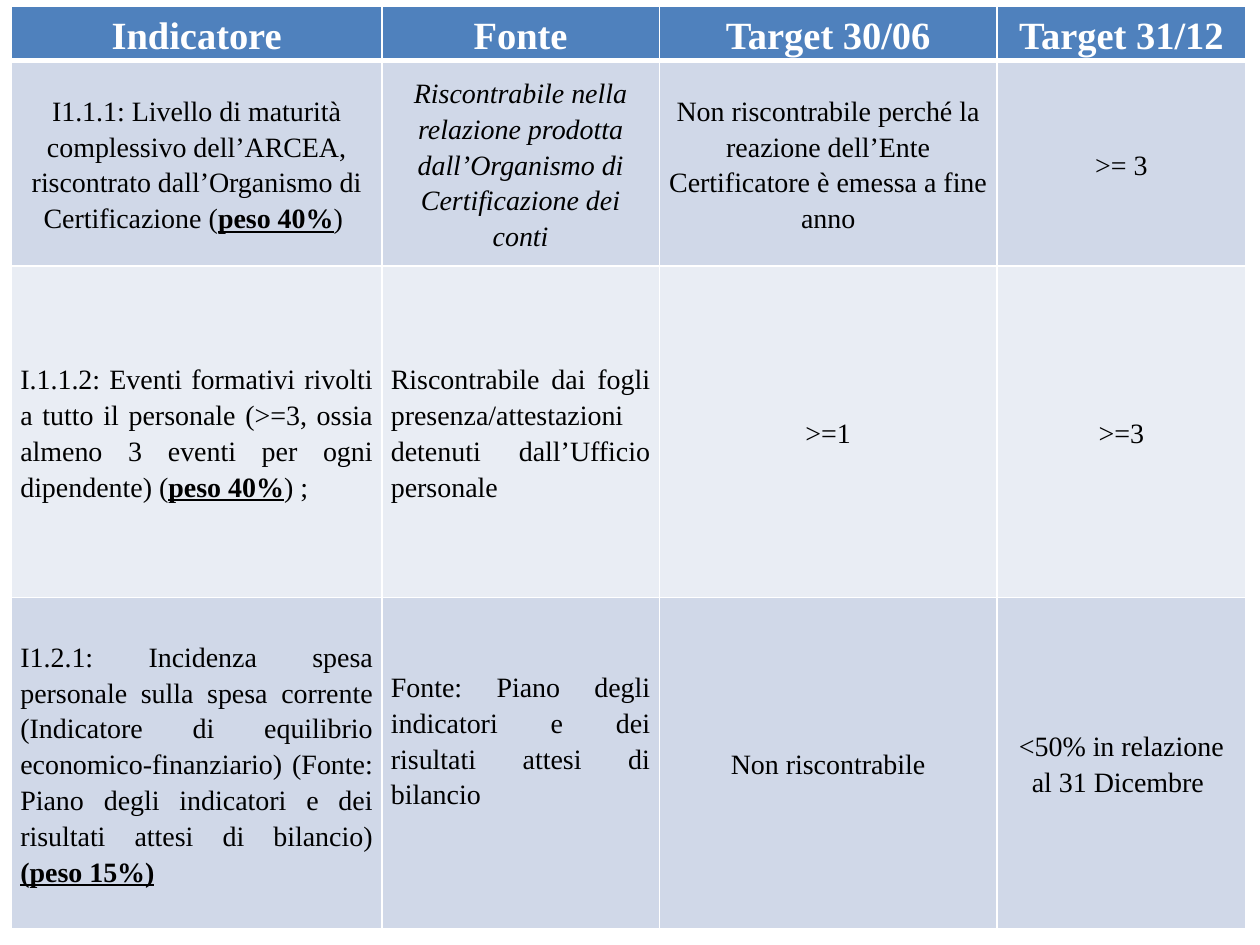
from lxml import etree
from pptx import Presentation
from pptx.dml.color import RGBColor
from pptx.enum.text import MSO_ANCHOR, PP_ALIGN
from pptx.oxml.ns import qn
from pptx.util import Cm, Pt

CENTER, JUSTIFY = PP_ALIGN.CENTER, PP_ALIGN.JUSTIFY
MIDDLE = MSO_ANCHOR.MIDDLE
FONT = "Times New Roman"
WHITE, BLACK, BLUE = "FFFFFF", "000000", "4F81BD"
BANDS = ["D0D8E8", "E9EDF4"]
COLUMN_WIDTHS = [7.47, 5.59, 6.81, 5.01]
ROW_HEIGHTS = [1.09, 4.14, 6.68, 6.68]
HEADINGS = ["Indicatore", "Fonte", "Target 30/06", "Target 31/12"]
INDICATORS = [
    [
        ("I1.1.1: Livello di maturità complessivo dell’ARCEA, riscontrato "
         "dall’Organismo di Certificazione (", "peso 40%", ") "),
        ("Riscontrabile nella relazione prodotta dall’Organismo di "
         "Certificazione dei conti",),
        ("Non riscontrabile perché la reazione dell’Ente Certificatore è "
         "emessa a fine anno",),
        (">= 3",),
    ],
    [
        ("I.1.1.2: Eventi formativi rivolti a tutto il personale (>=3, ossia "
         "almeno 3 eventi per ogni dipendente) (", "peso 40%", ") ;"),
        ("Riscontrabile dai fogli presenza/attestazioni detenuti "
         "dall’Ufficio personale",),
        (">=1",),
        (">=3",),
    ],
    [
        ("I1.2.1: Incidenza spesa personale sulla spesa corrente (Indicatore "
         "di equilibrio economico-finanziario) (Fonte: Piano degli indicatori "
         "e dei risultati attesi di bilancio) ", "(peso 15%)"),
        ("Fonte: Piano degli indicatori e dei risultati attesi di bilancio",),
        ("Non riscontrabile",),
        ("<50% in relazione al 31 Dicembre ",),
    ],
]


def rgb(color):
    """Turn a hex string into a colour."""
    return RGBColor.from_string(color)


def add_text(paragraph, text, size=16, color=BLACK, bold=False, italic=False,
             underline=False):
    """Add one formatted run to a paragraph."""
    run = paragraph.add_run()
    run.text = text
    font = run.font
    font.name, font.size = FONT, Pt(size)
    font.bold, font.italic, font.underline = bold, italic, underline
    font.color.rgb = rgb(color)


def set_borders(cell, top=1, bottom=1):
    """Draw white lines around a cell, with widths in points."""
    properties = cell._tc.get_or_add_tcPr()
    widths = {"a:lnL": 1, "a:lnR": 1, "a:lnT": top, "a:lnB": bottom}
    for position, (tag, width) in enumerate(widths.items()):
        line = etree.Element(qn(tag), w=str(Pt(width)))
        fill = etree.SubElement(line, qn("a:solidFill"))
        etree.SubElement(fill, qn("a:srgbClr"), val=WHITE)
        properties.insert(position, line)


def format_cell(cell, fill, align=CENTER, space_after=0):
    """Fill and lay out a cell, and return its paragraph."""
    cell.fill.solid()
    cell.fill.fore_color.rgb = rgb(fill)
    cell.vertical_anchor = MIDDLE
    cell.margin_left = cell.margin_right = Cm(0.18)
    cell.margin_top = cell.margin_bottom = Cm(0)
    paragraph = cell.text_frame.paragraphs[0]
    paragraph.alignment = align
    paragraph.line_spacing = 1.15
    paragraph.space_after = Pt(space_after)
    return paragraph


def add_table(slide):
    """Add the empty table with its column widths and row heights."""
    table = slide.shapes.add_table(
        len(ROW_HEIGHTS), len(COLUMN_WIDTHS), Cm(0.23), Cm(0.13),
        Cm(sum(COLUMN_WIDTHS)), Cm(sum(ROW_HEIGHTS))).table
    for column, width in zip(table.columns, COLUMN_WIDTHS):
        column.width = Cm(width)
    for row, height in zip(table.rows, ROW_HEIGHTS):
        row.height = Cm(height)
    return table


def fill_header(table):
    """Write the column headings."""
    for column, heading in enumerate(HEADINGS):
        cell = table.cell(0, column)
        add_text(format_cell(cell, BLUE), heading, size=22, color=WHITE,
                 bold=True)
        set_borders(cell, bottom=3)


def fill_indicators(table):
    """Write one row per indicator, with its weight in bold underline."""
    for row, indicator in enumerate(INDICATORS, start=1):
        for column, parts in enumerate(indicator):
            cell = table.cell(row, column)
            align = JUSTIFY if row > 1 and column < 2 else CENTER
            paragraph = format_cell(cell, BANDS[(row - 1) % 2], align, 6)
            for index, part in enumerate(parts):
                weight = index == 1
                add_text(paragraph, part, bold=weight, underline=weight,
                         italic=(row, column) == (1, 1))
            set_borders(cell, top=3 if row == 1 else 1)
    table.cell(3, 1).margin_bottom = Cm(0.95)


def main():
    """Build the slide with the table of indicators."""
    presentation = Presentation()
    presentation.slide_width, presentation.slide_height = Cm(25.4), Cm(19.05)
    slide = presentation.slides.add_slide(presentation.slide_layouts[6])
    table = add_table(slide)
    fill_header(table)
    fill_indicators(table)
    presentation.save("out.pptx")


if __name__ == "__main__":
    main()
